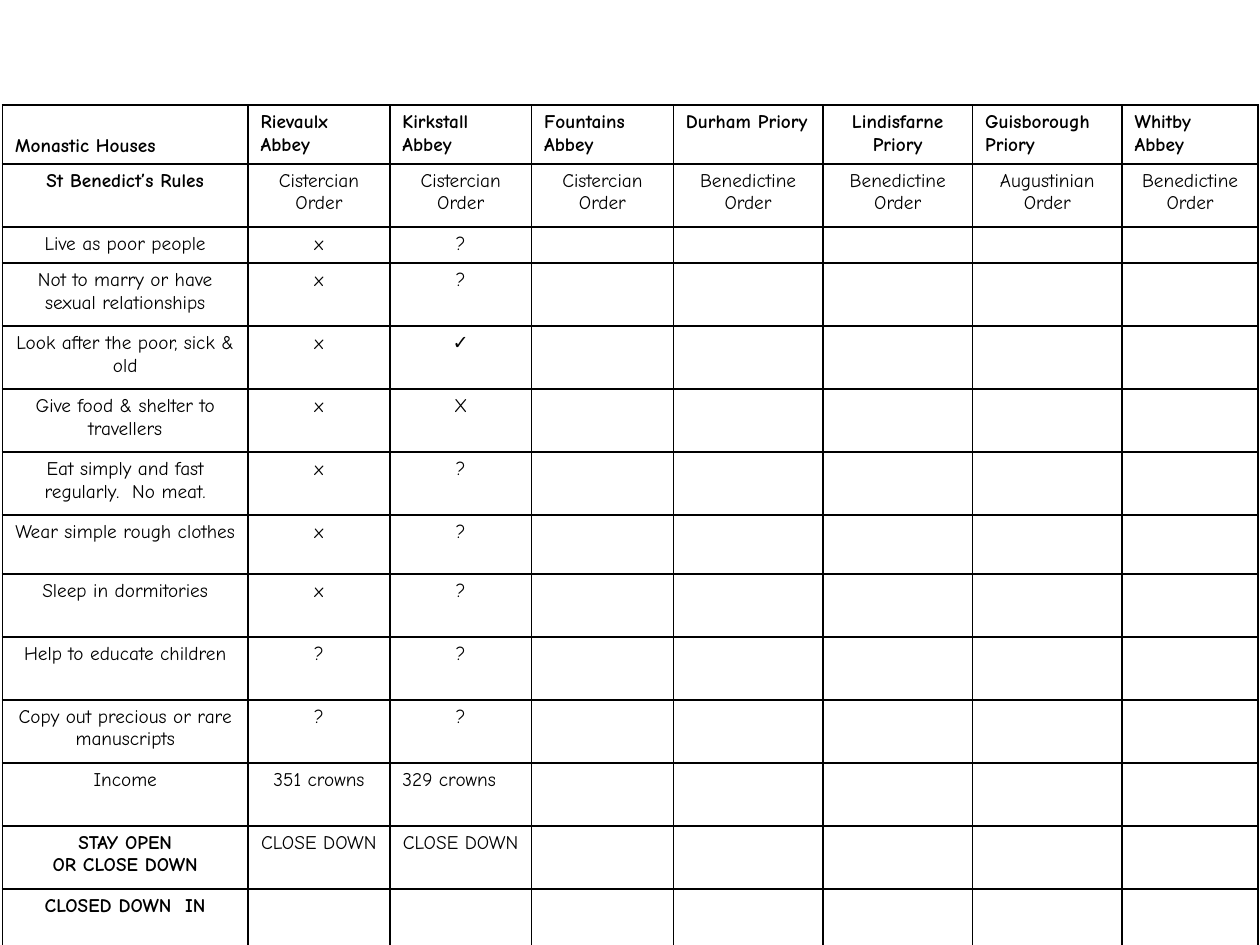
from lxml import etree
from pptx import Presentation
from pptx.dml.color import RGBColor
from pptx.enum import text
from pptx.oxml import ns
from pptx.util import Pt

BLACK = RGBColor(0, 0, 0)
FONT = "Comic Neue"
TEXT_SIZE = Pt(11)
LEFT, TOP = 1.4, 60
COLUMN_WIDTHS = [140.4] + [81] * 3 + [85.5] * 3 + [77.7]
TALL, MEDIUM, SHORT = 36, 33.6, 20.5

# Row height, then the cell texts from the left; the remaining cells stay empty.
ROWS = [
    (MEDIUM, "Monastic Houses", "Rievaulx Abbey", "Kirkstall Abbey", "Fountains Abbey",
     "Durham Priory", "Lindisfarne Priory", "Guisborough Priory", "Whitby Abbey"),
    (TALL, "St Benedict’s Rules", "Cistercian Order", "Cistercian Order", "Cistercian Order",
     "Benedictine Order", "Benedictine Order", "Augustinian Order", "Benedictine Order"),
    (SHORT, "Live as poor people", "x", "?"),
    (TALL, "Not to marry or have sexual relationships", "x", "?"),
    (TALL, "Look after the poor, sick & old", "x", "✓"),
    (TALL, "Give food & shelter to travellers", "x", "X"),
    (TALL, "Eat simply and fast regularly.  No meat.", "x", "?"),
    (MEDIUM, "Wear simple rough clothes", "x", "?"),
    (TALL, "Sleep in dormitories", "x", "?"),
    (TALL, "Help to educate children", "?", "?"),
    (TALL, "Copy out precious or rare manuscripts", "?", "?"),
    (TALL, "Income", "351 crowns", "329 crowns"),
    (TALL, "STAY OPEN\nOR CLOSE DOWN", "CLOSE DOWN", "CLOSE DOWN"),
    (TALL, "CLOSED DOWN  IN"),
]
BOLD_LABELS = {"St Benedict’s Rules", "STAY OPEN\nOR CLOSE DOWN", "CLOSED DOWN  IN"}
LEFT_ALIGNED = set(ROWS[0][1:]) - {"Lindisfarne Priory"} | {"329 crowns"}


def add_borders(cell):
    properties = cell._tc.get_or_add_tcPr()
    for position, side in enumerate(("lnL", "lnR", "lnT", "lnB")):
        line = etree.Element(ns.qn(f"a:{side}"), w=str(Pt(1)))
        fill = etree.SubElement(line, ns.qn("a:solidFill"))
        etree.SubElement(fill, ns.qn("a:srgbClr"), val=str(BLACK))
        properties.insert(position, line)


def write_cell(cell, wording, bold):
    align = text.PP_ALIGN.LEFT if wording in LEFT_ALIGNED else text.PP_ALIGN.CENTER
    frame = cell.text_frame
    for number, line in enumerate(wording.split("\n")):
        paragraph = frame.add_paragraph() if number else frame.paragraphs[0]
        paragraph.alignment = align
        run = paragraph.add_run()
        run.text = line
        run.font.name = FONT
        run.font.size = TEXT_SIZE
        run.font.bold = bold
        run.font.color.rgb = BLACK


def keep_empty_cell_low(cell):
    """Give an empty cell the table's text size, so that it does not stretch its row."""
    paragraph = cell.text_frame.paragraphs[0]._p
    etree.SubElement(paragraph, ns.qn("a:endParaRPr"), sz=str(int(TEXT_SIZE.pt * 100)))


def add_monastery_table(slide):
    heights = [row[0] for row in ROWS]
    table = slide.shapes.add_table(
        len(ROWS), len(COLUMN_WIDTHS), Pt(LEFT), Pt(TOP),
        Pt(sum(COLUMN_WIDTHS)), Pt(sum(heights))).table
    table.first_row = table.horz_banding = False
    for column, width in zip(table.columns, COLUMN_WIDTHS):
        column.width = Pt(width)
    for row_number, (height, *wordings) in enumerate(ROWS):
        table.rows[row_number].height = Pt(height)
        for column_number, cell in enumerate(table.rows[row_number].cells):
            cell.fill.background()
            add_borders(cell)
            if column_number < len(wordings):
                wording = wordings[column_number]
                write_cell(cell, wording, row_number == 0 or wording in BOLD_LABELS)
            else:
                keep_empty_cell_low(cell)
    table.cell(0, 0).vertical_anchor = text.MSO_ANCHOR.BOTTOM


def main():
    presentation = Presentation()
    presentation.slide_width, presentation.slide_height = Pt(720), Pt(540)
    slide = presentation.slides.add_slide(presentation.slide_layouts[6])
    add_monastery_table(slide)
    presentation.save("out.pptx")


if __name__ == "__main__":
    main()
